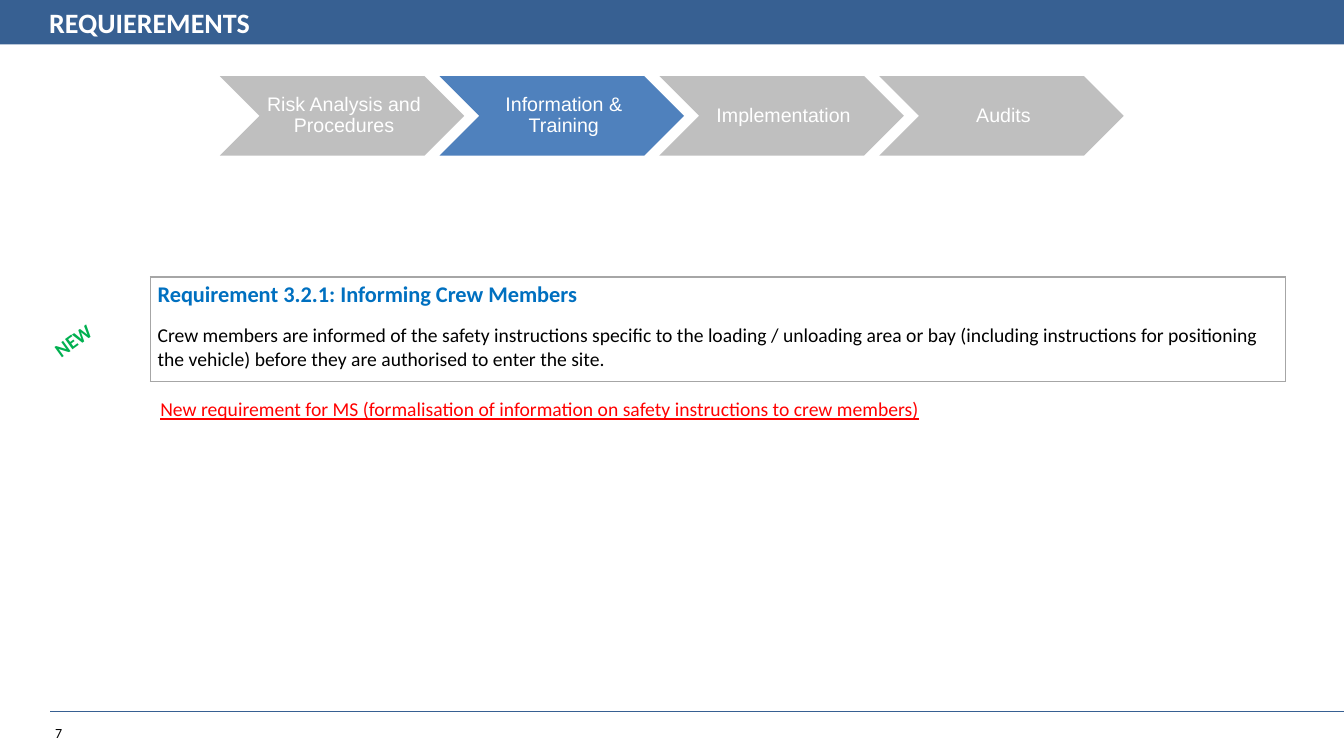
from dataclasses import dataclass

from lxml import etree
from pptx import Presentation
from pptx.dml.color import RGBColor
from pptx.enum.shapes import MSO_CONNECTOR as Connector, MSO_SHAPE as Shape
from pptx.enum.text import MSO_ANCHOR as Anchor, PP_ALIGN as Align
from pptx.oxml.ns import qn
from pptx.util import Cm, Pt


@dataclass(frozen=True)
class Theme:
    header: str = "376092"
    active: str = "4F81BD"
    inactive: str = "BFBFBF"
    border: str = "A6A6A6"
    heading: str = "0070C0"
    alert: str = "FF0000"
    new: str = "00B050"
    white: str = "FFFFFF"
    black: str = "000000"
    font: str = "Calibri"
    step_font: str = "Arial"
    title_size: int = 20
    heading_size: int = 16
    body_size: int = 14
    number_size: int = 10


theme = Theme()


def add_text(frame, text, size, color, font=theme.font, bold=False):
    paragraph = frame.paragraphs[0]
    run = paragraph.add_run()
    run.text = text
    run.font.name = font
    run.font.size = Pt(size)
    run.font.bold = bold
    run.font.color.rgb = RGBColor.from_string(color)
    return paragraph


def add_label(left, top, width, height, text, size, color, bold=False, wrap=False):
    box = slide.shapes.add_textbox(Cm(left), Cm(top), Cm(width), Cm(height))
    box.text_frame.word_wrap = wrap
    add_text(box.text_frame, text, size, color, bold=bold)
    return box


presentation = Presentation()
presentation.slide_width = Cm(33.87)
presentation.slide_height = Cm(19.05)
slide = presentation.slides.add_slide(presentation.slide_layouts[6])

# Footer line and page number
footer = slide.shapes.add_connector(
    Connector.STRAIGHT, Cm(1.27), Cm(17.93), Cm(33.87), Cm(17.93))
footer.line.color.rgb = RGBColor.from_string(theme.header)
footer.line.width = Pt(0.75)
etree.SubElement(footer.element.spPr, qn("a:effectLst"))
add_label(1.14, 18.14, 1.8, 0.69, "7", theme.number_size, theme.black, wrap=True)

# Header band and title
band = slide.shapes.add_shape(Shape.RECTANGLE, 0, 0, Cm(33.87), Cm(1.12))
band.shadow.inherit = False
band.fill.solid()
band.fill.fore_color.rgb = RGBColor.from_string(theme.header)
band.line.fill.background()
title = add_label(0.99, 0, 17.53, 1.12, "REQUIEREMENTS",
                  theme.title_size, theme.white, bold=True, wrap=True)
title.text_frame.vertical_anchor = Anchor.MIDDLE

# Process steps, with the current one highlighted
steps = ["Risk Analysis and Procedures", "Information & Training",
         "Implementation", "Audits"]
current_step = "Information & Training"
for index, step in enumerate(steps):
    chevron = slide.shapes.add_shape(
        Shape.CHEVRON, Cm(5.54 * (index + 1)), Cm(1.92), Cm(6.16), Cm(2))
    chevron.shadow.inherit = False
    chevron.fill.solid()
    chevron.fill.fore_color.rgb = RGBColor.from_string(
        theme.active if step == current_step else theme.inactive)
    chevron.line.fill.background()
    frame = chevron.text_frame
    frame.word_wrap = True
    frame.vertical_anchor = Anchor.MIDDLE
    frame.margin_left = Cm(0.15)
    frame.margin_right = frame.margin_top = frame.margin_bottom = Cm(0.05)
    paragraph = add_text(frame, step, theme.body_size, theme.white, theme.step_font)
    paragraph.alignment = Align.CENTER
    paragraph.line_spacing = 0.9

# Requirement table, framed on the outside only
table = slide.shapes.add_table(2, 1, Cm(3.79), Cm(6.98), Cm(28.6), Cm(2.63)).table
table.first_row = False
table.horz_banding = False
rows = [
    (1.18, "Requirement 3.2.1: Informing Crew Members",
     theme.heading_size, theme.heading, True, ("lnL", "lnR", "lnT")),
    (1.45, "Crew members are informed of the safety instructions specific to the "
     "loading / unloading area or bay (including instructions for positioning "
     "the vehicle) before they are authorised to enter the site.",
     theme.body_size, theme.black, False, ("lnL", "lnR", "lnB")),
]
for index, (height, text, size, color, bold, framed) in enumerate(rows):
    table.rows[index].height = Cm(height)
    cell = table.cell(index, 0)
    cell.margin_left = cell.margin_right = Cm(0.18)
    cell.margin_top = cell.margin_bottom = 0
    cell.fill.background()
    paragraph = add_text(cell.text_frame, text, size, color, bold=bold)
    if bold:
        paragraph.alignment = Align.JUSTIFY
        paragraph.line_spacing = 1.15
        paragraph.space_after = Pt(3)
    properties = cell._tc.get_or_add_tcPr()
    for position, side in enumerate(("lnL", "lnR", "lnT", "lnB")):
        border = etree.Element(qn(f"a:{side}"), w=str(Pt(1)))
        if side in framed:
            fill = etree.SubElement(border, qn("a:solidFill"))
            etree.SubElement(fill, qn("a:srgbClr"), val=theme.border)
        else:
            etree.SubElement(border, qn("a:noFill"))
        properties.insert(position, border)

# Remark and rotated tag
remark = add_label(
    3.79, 9.88, 19.91, 0.86,
    "New requirement for MS (formalisation of information on safety "
    "instructions to crew members)", theme.body_size, theme.alert)
remark.text_frame.paragraphs[0].runs[0].font.underline = True
tag = add_label(1.07, 8.1, 1.68, 0.86, "NEW", theme.body_size, theme.new, bold=True)
tag.rotation = 324.1

presentation.save("out.pptx")
